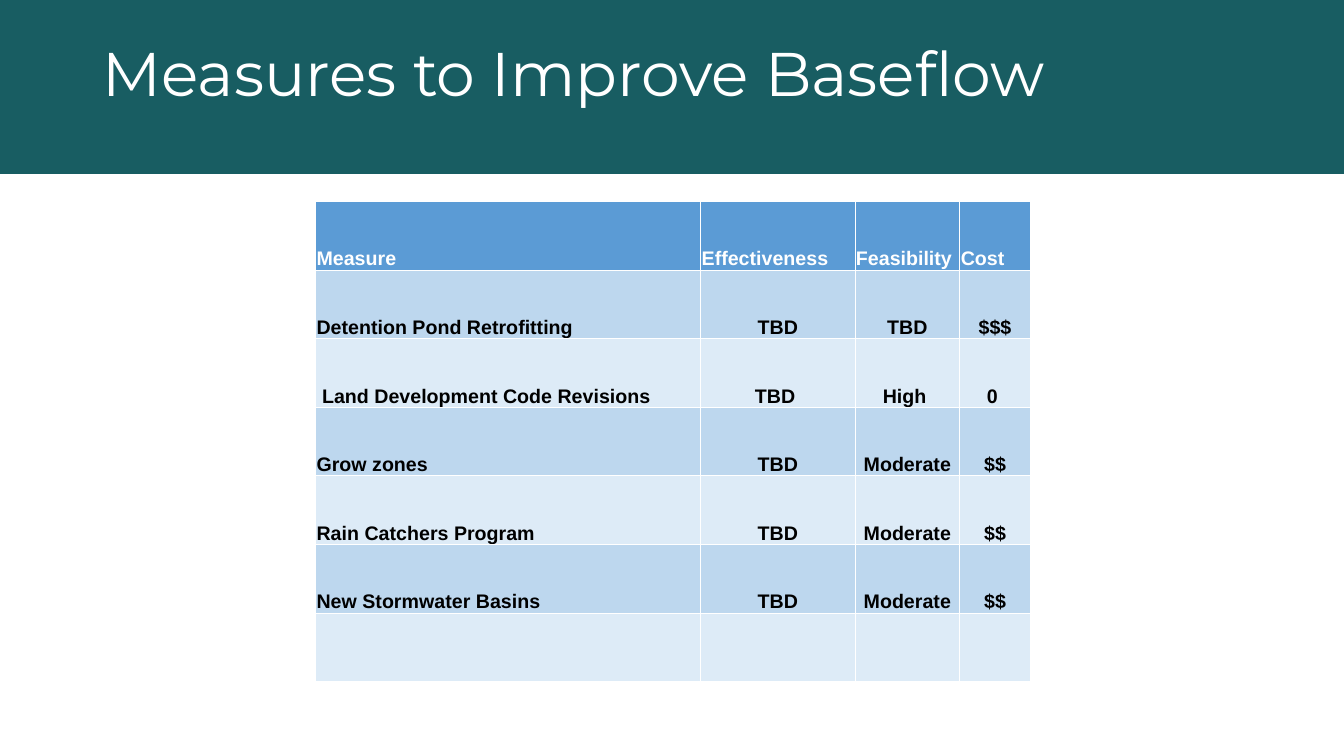
from lxml import etree
from pptx import Presentation
from pptx import util as u
from pptx.dml.color import RGBColor
from pptx.enum import shapes, text
from pptx.oxml import ns

W, H = 13.33, 7.5
COLORS = {
    "band": "185D62",
    "head": "5B9BD5",
    "odd": "BDD7EE",
    "even": "DDEBF7",
    "white": "FFFFFF",
    "black": "000000",
}
COLS = [3.82, 1.53, 1.04, 0.7]
ROW = 0.68
MEASURES = [
    ["Measure", "Effectiveness", "Feasibility", "Cost"],
    ["Detention Pond Retrofitting", "TBD", "TBD", "$$$"],
    [" Land Development Code Revisions", "TBD ", "High ", "0 "],
    ["Grow zones", "TBD", "Moderate", "$$"],
    ["Rain Catchers Program", "TBD", "Moderate", "$$"],
    ["New Stormwater Basins", "TBD", "Moderate", "$$"],
    ["", "", "", ""],
]


def rgb(name):
    return RGBColor.from_string(COLORS[name])


def write(tf, words, size=14, font="Arial", color="black", bold=False,
          align=text.PP_ALIGN.LEFT, spacing=None):
    p = tf.paragraphs[0]
    p.alignment = align
    if spacing:
        p.line_spacing = spacing
    f = p.font
    if words:
        r = p.add_run()
        r.text = words
        f = r.font
    f.size = u.Pt(size)
    f.name = font
    f.bold = bold
    f.color.rgb = rgb(color)


def add_band(s, height):
    sp = s.shapes.add_shape(shapes.MSO_SHAPE.RECTANGLE, 0, 0, u.Inches(W), u.Inches(height))
    sp.shadow.inherit = False
    sp.fill.solid()
    sp.fill.fore_color.rgb = rgb("band")
    sp.line.fill.background()


def add_title(s, words, x, y, w, h):
    sp = s.shapes.add_textbox(*map(u.Inches, (x, y, w, h)))
    tf = sp.text_frame
    tf.word_wrap = True
    tf.vertical_anchor = text.MSO_ANCHOR.BOTTOM
    tf.margin_left = tf.margin_right = tf.margin_top = tf.margin_bottom = u.Inches(0.1)
    write(tf, words, size=44, font="Montserrat", color="white", spacing=0.9)


def add_borders(cell, color, width):
    tcPr = cell._tc.get_or_add_tcPr()
    for side in "LRTB":
        ln = etree.SubElement(tcPr, ns.qn(f"a:ln{side}"), w=str(u.Pt(width)))
        fill = etree.SubElement(ln, ns.qn("a:solidFill"))
        etree.SubElement(fill, ns.qn("a:srgbClr"), val=COLORS[color])


def fill_cell(cell, words, row, col):
    cell.vertical_anchor = text.MSO_ANCHOR.BOTTOM
    cell.margin_left = cell.margin_right = cell.margin_top = u.Inches(0.01)
    cell.margin_bottom = 0
    add_borders(cell, "white", 0.5)
    cell.fill.solid()
    cell.fill.fore_color.rgb = rgb("head" if row == 0 else "odd" if row % 2 else "even")
    centred = row > 0 and col > 0
    write(cell.text_frame, words, bold=True, color="black" if row else "white",
          align=text.PP_ALIGN.CENTER if centred else text.PP_ALIGN.LEFT)


def add_measures(s, x, y):
    size = (sum(COLS), ROW * len(MEASURES))
    frame = s.shapes.add_table(len(MEASURES), len(COLS), *map(u.Inches, (x, y, *size)))
    table = frame.table
    for column, width in zip(table.columns, COLS):
        column.width = u.Inches(width)
    for i, line in enumerate(MEASURES):
        table.rows[i].height = u.Inches(ROW)
        for j, words in enumerate(line):
            fill_cell(table.cell(i, j), words, i, j)


def main():
    prs = Presentation()
    prs.slide_width, prs.slide_height = u.Inches(W), u.Inches(H)
    s = prs.slides.add_slide(prs.slide_layouts[6])
    add_band(s, 0.23 * H)
    add_title(s, "Measures to Improve Baseflow", 0.92, 0.5, 11.5, 0.69)
    add_measures(s, 3.13, 2)
    prs.save("out.pptx")


if __name__ == "__main__":
    main()
